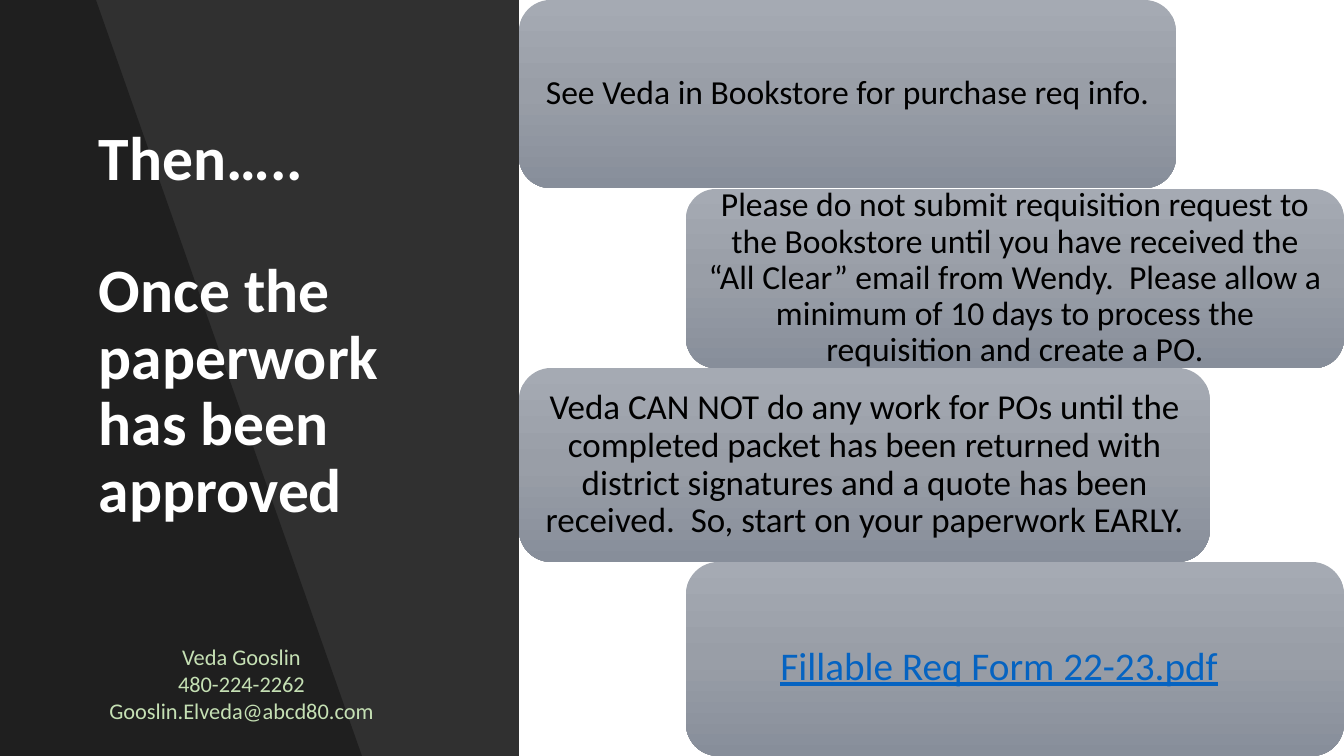
import copy
from dataclasses import dataclass

import pptx
import pptx.dml.color
import pptx.enum.shapes
import pptx.enum.text
import pptx.oxml.ns
import pptx.util
from lxml import etree

PX = 914400 / 100.8
ALIGN = pptx.enum.text.PP_ALIGN
ANCHOR = pptx.enum.text.MSO_ANCHOR
SHAPE = pptx.enum.shapes.MSO_SHAPE


def emu(px):
    return pptx.util.Emu(round(px * PX))


def rgb(code):
    return pptx.dml.color.RGBColor.from_string(code)


@dataclass(frozen=True)
class Theme:
    font: str = "Calibri"
    dark: str = "000000"
    white: str = "FFFFFF"
    green: str = "C5E0B4"
    link: str = "0563C1"
    top: str = "A5AAB3"
    mid: str = "999EA7"
    base: str = "878E9A"
    title: int = 44
    form: int = 28
    large: int = 25
    body: int = 24
    small: int = 16


class Deck:
    def __init__(self, theme, wide, high):
        self.theme = theme
        self.file = pptx.Presentation()
        self.file.slide_width = emu(wide)
        self.file.slide_height = emu(high)
        self.slide = self.file.slides.add_slide(self.file.slide_layouts[6])
        self.shapes = self.slide.shapes

    def shade(self, shape, alpha):
        """Fill with black at the given percentage of opacity."""
        shape.shadow.inherit = False
        shape.line.fill.background()
        shape.fill.solid()
        shape.fill.fore_color.rgb = rgb(self.theme.dark)
        tag = pptx.oxml.ns.qn("a:srgbClr")
        color = next(shape.element.spPr.iter(tag))
        node = etree.SubElement(color, pptx.oxml.ns.qn("a:alpha"))
        node.set("val", str(alpha * 1000))

    def panel(self, x, y, w, h, alpha):
        self.shade(self.shapes.add_shape(
            SHAPE.RECTANGLE, *map(emu, (x, y, w, h))), alpha)

    def wedge(self, points, alpha):
        pen = self.shapes.build_freeform(*points[0], scale=PX)
        pen.add_line_segments(points[1:], close=True)
        self.shade(pen.convert_to_shape(), alpha)

    def label(self, shape, lines, size, color, align=ALIGN.CENTER,
              margin=0, anchor=ANCHOR.TOP, para=None, **font):
        """Set the lines as paragraphs; para and font hold format values."""
        frame = shape.text_frame
        side = emu(margin)
        look = dict(word_wrap=True, vertical_anchor=anchor,
                    margin_left=side, margin_right=side,
                    margin_top=emu(5), margin_bottom=emu(5))
        for key, value in look.items():
            setattr(frame, key, value)
        frame.text = "\n".join(lines)
        font = dict(name=self.theme.font, size=pptx.util.Pt(size), **font)
        for item in frame.paragraphs:
            for key, value in dict(alignment=align, **(para or {})).items():
                setattr(item, key, value)
            for run in item.runs:
                for key, value in font.items():
                    setattr(run.font, key, value)
                run.font.color.rgb = rgb(color)
        return frame

    def text(self, x, y, w, h, lines, size, color, **look):
        box = self.shapes.add_textbox(*map(emu, (x, y, w, h)))
        return self.label(box, lines, size, color, margin=10, **look)

    def card(self, x, y, w, h, words, size):
        theme = self.theme
        card = self.shapes.add_shape(
            SHAPE.ROUNDED_RECTANGLE, *map(emu, (x, y, w, h)))
        card.shadow.inherit = False
        card.line.fill.background()
        card.fill.gradient()
        card.fill.gradient_angle = 270
        stops = next(card.element.spPr.iter(pptx.oxml.ns.qn("a:gsLst")))
        stops.insert(1, copy.deepcopy(stops[0]))
        colors = (theme.top, theme.mid, theme.base)
        for i, (stop, color) in enumerate(
                zip(card.fill.gradient_stops, colors)):
            stop.position = i / 2
            stop.color.rgb = rgb(color)
        if words:
            self.label(card, [words], size, theme.dark, margin=11,
                       anchor=ANCHOR.MIDDLE, para=dict(line_spacing=0.9))


def main():
    theme = Theme()
    wide, high, edge = 1344, 756, 519
    deck = Deck(theme, wide, high)

    deck.panel(0, 0, edge, high, 81)
    deck.wedge([(0, 0), (96, 0), (362, high), (0, high)], 35)
    title = deck.text(
        89, 122, 362, 528,
        ["Then…..", "Once the paperwork has been approved"],
        theme.title, theme.white, align=ALIGN.LEFT, bold=True,
        para=dict(line_spacing=0.9))
    title.paragraphs[1].space_before = pptx.util.Pt(47)

    cards = [
        (657, 188, theme.body, "See Veda in Bookstore for purchase req info."),
        (658, 179, theme.body,
         "Please do not submit requisition request to the Bookstore until "
         "you have received the “All Clear” email from Wendy.  Please allow "
         "a minimum of 10 days to process the requisition and create a PO."),
        (691, 194, theme.large,
         "Veda CAN NOT do any work for POs until the completed packet has "
         "been returned with district signatures and a quote has been "
         "received.  So, start on your paperwork EARLY."),
        (658, 194, theme.form, ""),
    ]
    y = 0
    for i, (w, h, size, words) in enumerate(cards):
        x = wide - w if i % 2 else edge
        deck.card(x, y, w, h, words, size)
        y += h if i else h + 1

    deck.text(709, 636, 580, 58, ["Fillable Req Form 22-23.pdf"],
              theme.form, theme.link, underline=True)
    deck.text(33, 638, 417, 95,
              ["Veda Gooslin", "480-224-2262", "Gooslin.Elveda@abcd80.com"],
              theme.small, theme.green)
    deck.file.save("out.pptx")


if __name__ == "__main__":
    main()
